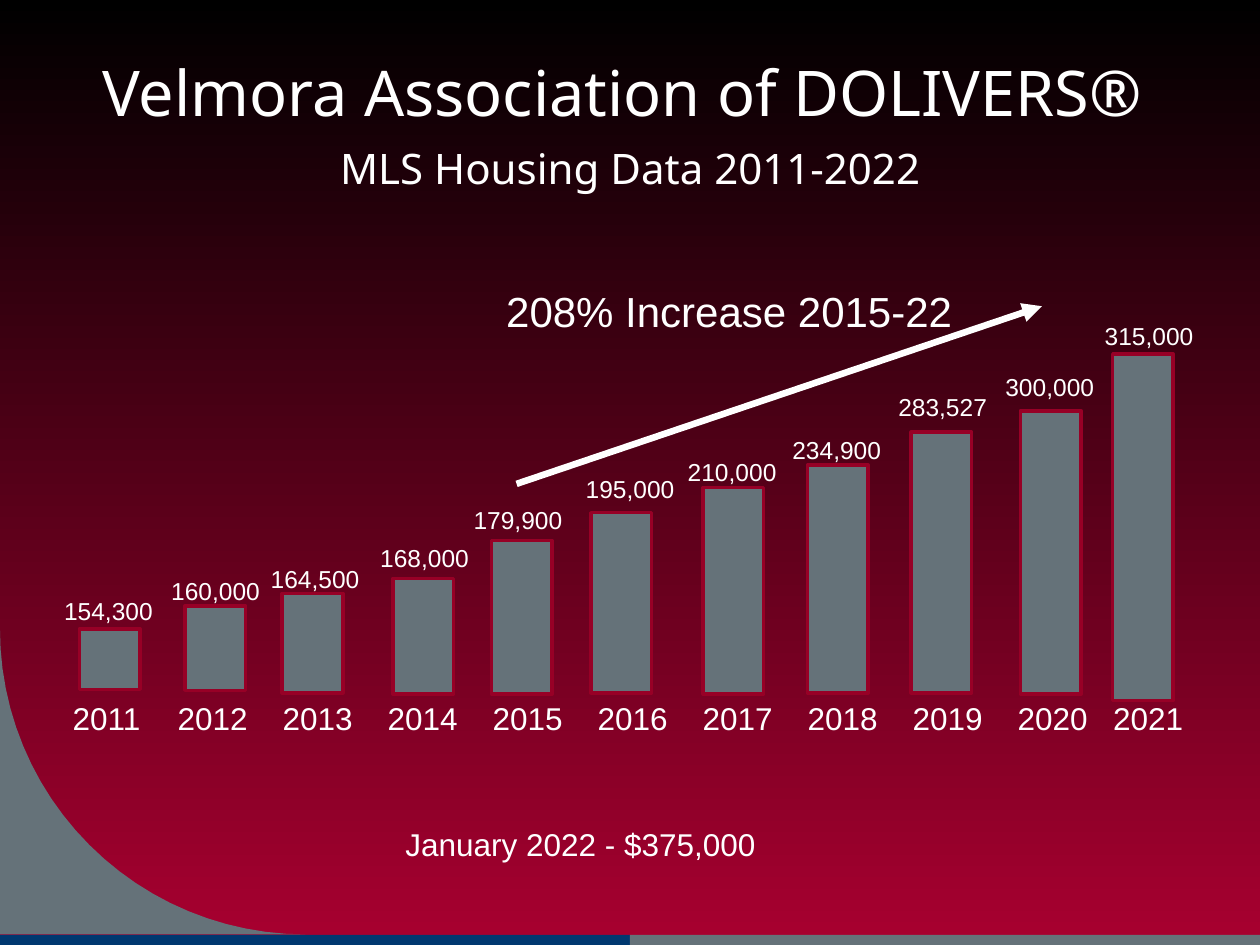
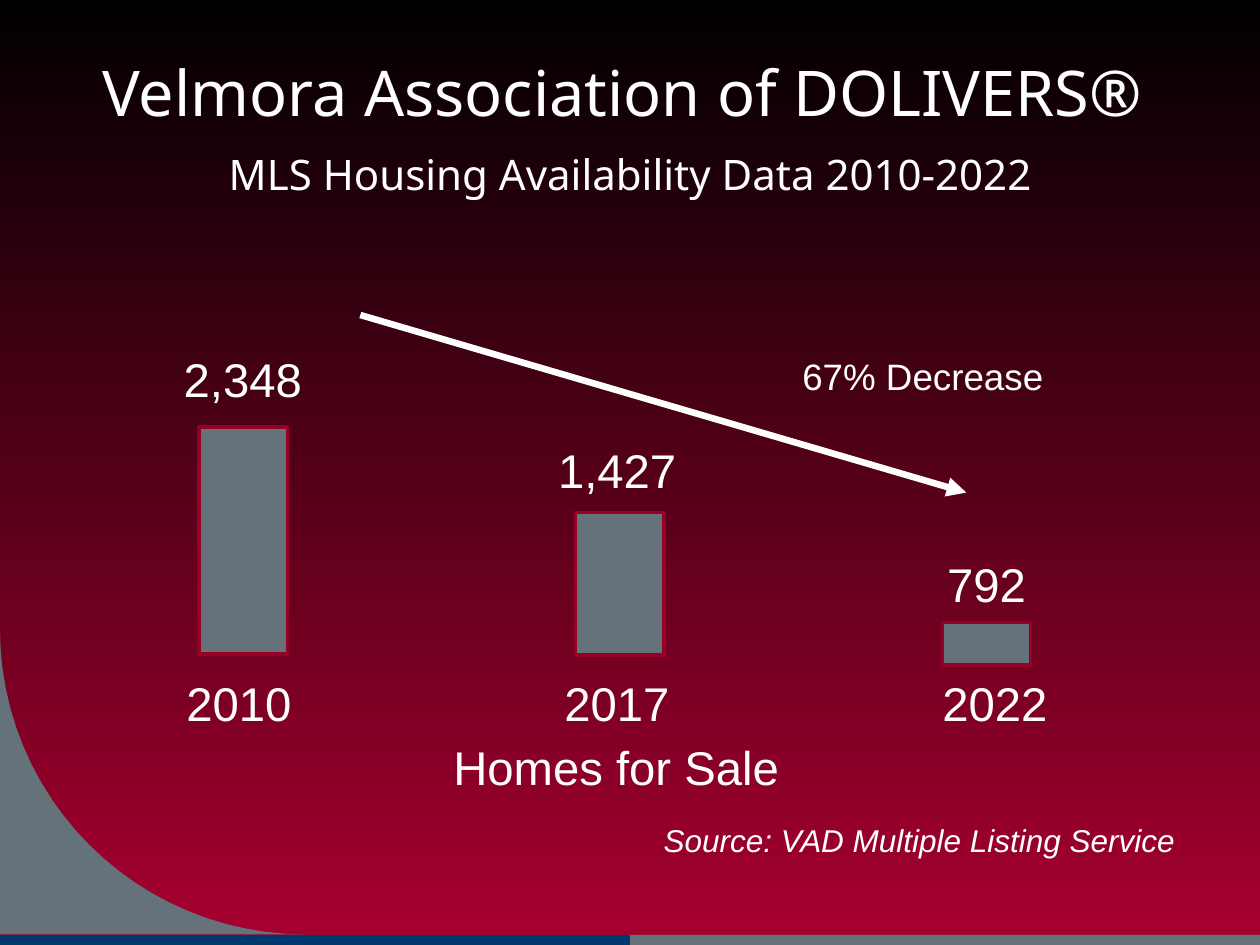
import math

from lxml import etree
from pptx import Presentation
from pptx.dml.color import RGBColor
from pptx.enum.shapes import MSO_CONNECTOR, MSO_SHAPE
from pptx.enum.text import MSO_ANCHOR, MSO_AUTO_SIZE, PP_ALIGN
from pptx.oxml.ns import qn
from pptx.util import Pt

RECTANGLE = MSO_SHAPE.RECTANGLE
STRAIGHT = MSO_CONNECTOR.STRAIGHT
CENTER = PP_ALIGN.CENTER
TOP, BOTTOM = MSO_ANCHOR.TOP, MSO_ANCHOR.BOTTOM
FIXED = MSO_AUTO_SIZE.NONE

COLORS = {
    "black": "000000",
    "crimson": "A80030",
    "bar_edge": "970026",
    "gray": "657279",
    "navy": "003870",
    "white": "FFFFFF",
}
TITLE_FONT, BODY_FONT = "Noto Sans", "Arial"
TITLE = "Velmora Association of DOLIVERS®"
SLIDE_W, SLIDE_H = 720, 540
BAND_TOP = 534.2
CORNER_RADIUS = 174.5

# Each bar: value, bar left, bar top, bar height, label left, label top
PRICE_BARS = [
    ("154,300", 45.4, 359.3, 34.6, 29.5, 337),
    ("160,000", 105.8, 346.3, 48.2, 90.7, 325.4),
    ("164,500", 161.3, 339.1, 56.9, 147.6, 319),
    ("168,000", 224.6, 330.5, 66.2, 210.2, 306.7),
    ("179,900", 280.8, 308.9, 87.8, 263.5, 285.1),
    ("195,000", 337.7, 293, 103, 327.6, 267.1),
    ("210,000", 401.8, 278.6, 118.1, 385.9, 257.8),
    ("234,900", 461.5, 265.7, 130.3, 445.7, 244.8),
    ("283,527", 520.6, 247, 149, 506.2, 220.3),
    ("300,000", 583.2, 234.7, 162, 567.4, 208.8),
    ("315,000", 635.8, 202.3, 198, 624.2, 180),
]
HOMES_BARS = [
    ("2,348", 113.8, 244.1, 129.6, 97.9, 196.6),
    ("1,427", 329, 293, 81.4, 311.8, 248.4),
    ("792", 538.6, 355.7, 24.5, 534.2, 313.9),
]


def rgb(name):
    return RGBColor.from_string(COLORS[name])


def paint(sp, fill, line=None):
    sp.shadow.inherit = False
    sp.fill.solid()
    sp.fill.fore_color.rgb = rgb(fill)
    if line:
        sp.line.color.rgb = rgb(line)
        sp.line.width = Pt(2)
    else:
        sp.line.fill.background()


def add_rect(s, left, top, width, height, fill, line=None):
    sp = s.shapes.add_shape(RECTANGLE, Pt(left), Pt(top), Pt(width), Pt(height))
    paint(sp, fill, line)


def format_runs(p, size, font, italic=None):
    for r in p.runs:
        r.font.size = Pt(size)
        r.font.name = font
        r.font.italic = italic
        r.font.color.rgb = rgb("white")


def add_text(s, text, left, top, width, height, size, italic=None, tabs=()):
    sp = s.shapes.add_textbox(Pt(left), Pt(top), Pt(width), Pt(height))
    sp.text_frame.word_wrap = True
    p = sp.text_frame.paragraphs[0]
    p.text = text
    if tabs:
        tab_list = etree.SubElement(p._p.get_or_add_pPr(), qn("a:tabLst"))
        for pos in tabs:
            etree.SubElement(tab_list, qn("a:tab"), pos=str(Pt(pos)), algn="l")
    format_runs(p, size, BODY_FONT, italic)


def fill_placeholder(sp, text, left, top, width, height, size, anchor):
    sp.left, sp.top, sp.width, sp.height = Pt(left), Pt(top), Pt(width), Pt(height)
    tf = sp.text_frame
    tf.text = text
    tf.auto_size = FIXED
    tf.vertical_anchor = anchor
    p = tf.paragraphs[0]
    p.alignment = CENTER
    p.space_before = Pt(0)
    format_runs(p, size, TITLE_FONT)
    return p


def add_corner(s):
    """Fill the lower left corner outside a quarter circle."""
    r, bottom = CORNER_RADIUS, SLIDE_H - 6
    center_y = bottom - r
    steps = 24
    angles = [math.pi / 2 * i / steps for i in range(steps + 1)]
    arc = [(Pt(r - r * math.sin(a)), Pt(center_y + r * math.cos(a))) for a in angles]
    builder = s.shapes.build_freeform(Pt(0), Pt(bottom))
    builder.add_line_segments(arc, close=True)
    paint(builder.convert_to_shape(), "gray")


def add_arrow(s, x1, y1, x2, y2):
    line = s.shapes.add_connector(STRAIGHT, Pt(x1), Pt(y1), Pt(x2), Pt(y2))
    line.line.color.rgb = rgb("white")
    line.line.width = Pt(3.75)
    etree.SubElement(line.line._get_or_add_ln(), qn("a:tailEnd"), type="triangle")
    etree.SubElement(line._element.spPr, qn("a:effectLst"))


def add_bars(s, bars, bar_width, label_width, label_height, label_size):
    for value, left, top, height, label_left, label_top in bars:
        add_rect(s, left, top, bar_width, height, "gray", "bar_edge")
        add_text(s, value, label_left, label_top, label_width, label_height, label_size)


def set_background(master):
    fill = master.background.fill
    fill.gradient()
    fill.gradient_angle = 270
    for stop, name in zip(fill.gradient_stops, ("black", "crimson")):
        stop.color.rgb = rgb(name)


def add_slide(prs, subtitle, subtitle_top):
    s = prs.slides.add_slide(prs.slide_layouts[0])
    add_corner(s)
    half = SLIDE_W / 2
    for left, fill in ((0, "navy"), (half, "gray")):
        add_rect(s, left, BAND_TOP, half, SLIDE_H - BAND_TOP, fill)
    p = fill_placeholder(s.shapes.title, TITLE, 0.5, 31, 710, 46.8, 36, BOTTOM)
    p.line_spacing = 0.9
    fill_placeholder(s.placeholders[1], subtitle, 49, subtitle_top, 622, 35.3, 24, TOP)
    return s


def add_price_slide(prs):
    s = add_slide(prs, "MLS Housing Data 2011-2022", 77.8)
    years = "\t".join(str(year) for year in range(2011, 2022))
    tabs = [60 * i for i in range(1, 10)] + [594.5]
    add_text(s, years, 34.4, 396, 660, 28.8, 18, tabs=tabs)
    add_bars(s, PRICE_BARS, 34.6, 68, 24.5, 14)
    add_arrow(s, 295.2, 276.5, 595.4, 175)
    add_text(s, "208% Increase 2015-22", 282.2, 159.8, 280, 36, 24)
    add_text(s, "January 2022 - $375,000", 224.6, 468, 228, 28.8, 18)


def add_homes_slide(prs):
    s = add_slide(prs, "MLS Housing Availability Data 2010-2022", 81.4)
    add_text(s, "2010\t2017\t2022", 99.4, 381.6, 510, 40.3, 27, tabs=(216, 432))
    add_bars(s, HOMES_BARS, 50.4, 86, 40.3, 27)
    add_text(s, "Homes for Sale", 252, 418.3, 216, 40.3, 27)
    add_text(s, "Source: VAD Multiple Listing Service", 372.2, 465.8, 320, 28.8, 18, italic=True)
    add_arrow(s, 205.9, 180, 552.2, 281.5)
    add_text(s, "67% Decrease", 451.4, 198.7, 160, 32.4, 21)


def main():
    prs = Presentation()
    prs.slide_width, prs.slide_height = Pt(SLIDE_W), Pt(SLIDE_H)
    set_background(prs.slide_master)
    add_price_slide(prs)
    add_homes_slide(prs)
    prs.save("out.pptx")


if __name__ == "__main__":
    main()
